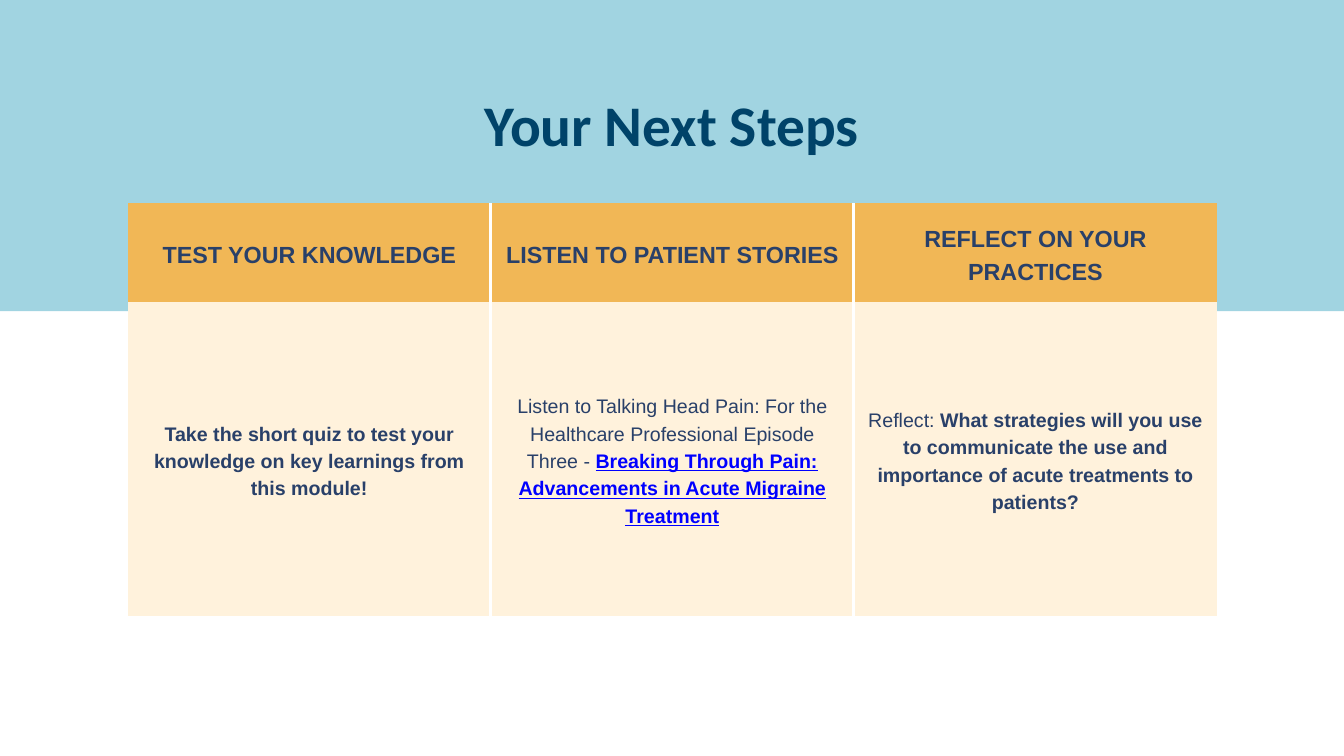
from dataclasses import dataclass

import lxml.etree
import pptx
import pptx.dml.color
import pptx.enum.shapes
import pptx.enum.text
import pptx.oxml.ns
import pptx.util
from pptx.util import Inches


@dataclass(frozen=True)
class Theme:
    band: str = "A1D4E1"
    title: str = "004369"
    text: str = "294069"
    link: str = "0000FF"
    header: str = "F1B756"
    body: str = "FFF2DC"
    divider: str = "FFFFFF"
    title_font: str = "Calibri"
    text_font: str = "Arial"
    title_size: float = 61.5
    header_size: float = 25
    body_size: float = 21
    divider_width: float = 3.75
    leading: float = 1.4  # line height as a multiple of the type size


@dataclass(frozen=True)
class Phrase:
    text: str
    bold: bool = True
    link: bool = False


@dataclass(frozen=True)
class Step:
    heading: str
    phrases: tuple[Phrase, ...]


THEME = Theme()
NO_TABLE_STYLE = "{2D5ABB26-0587-4C30-8999-92F81FD0307C}"

STEPS = (
    Step("TEST YOUR KNOWLEDGE", (
        Phrase("Take the short quiz to test your knowledge on key learnings from this module!"),
    )),
    Step("LISTEN TO PATIENT STORIES", (
        Phrase("Listen to Talking Head Pain: For the Healthcare Professional Episode Three - ", bold=False),
        Phrase("Breaking Through Pain: Advancements in Acute Migraine Treatment", link=True),
    )),
    Step("REFLECT ON YOUR PRACTICES", (
        Phrase("Reflect: ", bold=False),
        Phrase("What strategies will you use to communicate the use and importance "
               "of acute treatments to patients?"),
    )),
)


def rgb(value: str) -> pptx.dml.color.RGBColor:
    return pptx.dml.color.RGBColor.from_string(value)


def write_text(paragraph, text: str, *, size: float, font: str = THEME.text_font,
               color: str = THEME.text, bold: bool = True, underline: bool = False) -> None:
    """Add one formatted run to a centred paragraph."""
    paragraph.alignment = pptx.enum.text.PP_ALIGN.CENTER
    paragraph.line_spacing = pptx.util.Pt(round(size * THEME.leading, 1))
    run = paragraph.add_run()
    run.text = text
    run.font.name = font
    run.font.size = pptx.util.Pt(size)
    run.font.bold = bold
    run.font.underline = underline
    run.font.color.rgb = rgb(color)


def add_band(slide) -> None:
    band = slide.shapes.add_shape(pptx.enum.shapes.MSO_SHAPE.RECTANGLE,
                                  0, 0, Inches(20), Inches(4.63))
    band.shadow.inherit = False
    band.fill.solid()
    band.fill.fore_color.rgb = rgb(THEME.band)
    band.line.fill.background()
    # Move the band behind the title placeholder
    band.element.getparent().insert(2, band.element)


def set_title(slide, text: str) -> None:
    title = slide.shapes.title
    title.left, title.top = Inches(2.51), Inches(1.16)
    title.width, title.height = Inches(14.98), Inches(1.15)
    frame = title.text_frame
    frame.margin_left = frame.margin_top = frame.margin_right = frame.margin_bottom = 0
    frame.vertical_anchor = pptx.enum.text.MSO_ANCHOR.TOP
    frame.auto_size = pptx.enum.text.MSO_AUTO_SIZE.NONE
    frame.word_wrap = True
    write_text(frame.paragraphs[0], text, size=THEME.title_size,
               font=THEME.title_font, color=THEME.title)


def set_borders(cell, visible_sides: str) -> None:
    """Draw white dividers on the named sides and clear the others."""
    properties = cell._tc.get_or_add_tcPr()
    qualified = pptx.oxml.ns.qn
    for index, side in enumerate("LRTB"):
        line = lxml.etree.Element(qualified(f"a:ln{side}"))
        if side in visible_sides:
            line.set("w", str(pptx.util.Pt(THEME.divider_width)))
            fill = lxml.etree.SubElement(line, qualified("a:solidFill"))
            lxml.etree.SubElement(fill, qualified("a:srgbClr"), val=THEME.divider)
        else:
            line.set("w", "0")
            lxml.etree.SubElement(line, qualified("a:noFill"))
        properties.insert(index, line)


def fill_cell(cell, phrases: tuple[Phrase, ...], *, size: float, fill: str, borders: str) -> None:
    cell.fill.solid()
    cell.fill.fore_color.rgb = rgb(fill)
    cell.vertical_anchor = pptx.enum.text.MSO_ANCHOR.MIDDLE
    cell.margin_left = cell.margin_right = Inches(0.21)
    cell.margin_top = cell.margin_bottom = Inches(0.21)
    for phrase in phrases:
        write_text(cell.text_frame.paragraphs[0], phrase.text, size=size, bold=phrase.bold,
                   color=THEME.link if phrase.link else THEME.text, underline=phrase.link)
    set_borders(cell, borders)


def add_steps_table(slide, steps: tuple[Step, ...]) -> None:
    frame = slide.shapes.add_table(2, len(steps), Inches(1.9), Inches(3.02),
                                   Inches(16.21), Inches(6.15))
    table = frame.table
    table.first_row = table.horz_banding = False
    for style in frame.element.iter(pptx.oxml.ns.qn("a:tableStyleId")):
        style.text = NO_TABLE_STYLE
    table.rows[0].height, table.rows[1].height = Inches(1.47), Inches(4.68)
    for column, step in enumerate(steps):
        borders = ("L" if column > 0 else "") + ("R" if column < len(steps) - 1 else "")
        fill_cell(table.cell(0, column), (Phrase(step.heading),),
                  size=THEME.header_size, fill=THEME.header, borders=borders)
        fill_cell(table.cell(1, column), step.phrases,
                  size=THEME.body_size, fill=THEME.body, borders=borders)


def main() -> None:
    presentation = pptx.Presentation()
    presentation.slide_width, presentation.slide_height = Inches(20), Inches(11.25)
    slide = presentation.slides.add_slide(presentation.slide_layouts[5])
    add_band(slide)
    set_title(slide, "Your Next Steps")
    add_steps_table(slide, STEPS)
    presentation.save("out.pptx")


if __name__ == "__main__":
    main()
